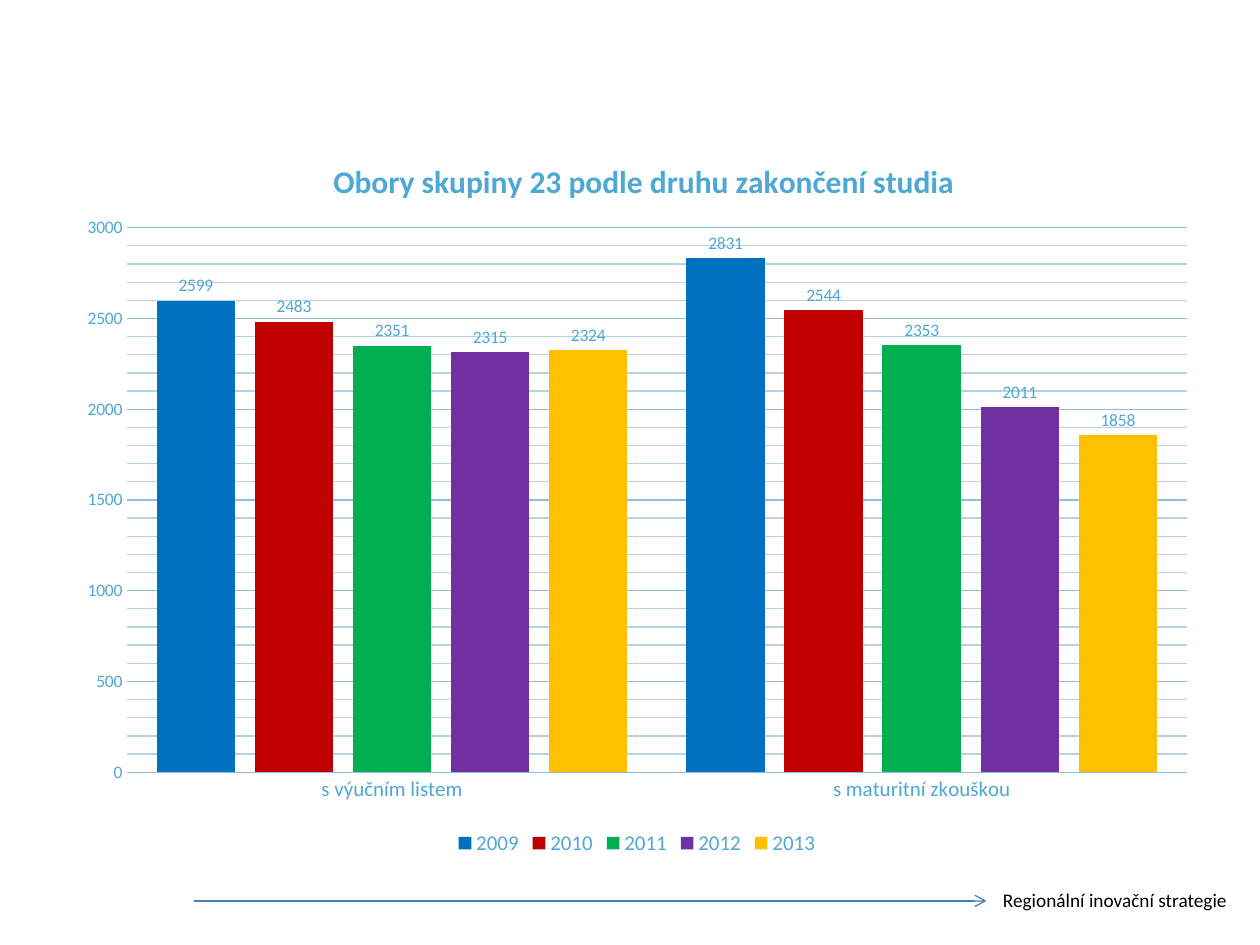
from dataclasses import dataclass

from lxml import etree
from pptx import Presentation
from pptx.chart.data import CategoryChartData
from pptx.dml.color import RGBColor
from pptx.enum import chart as ch, shapes, text
from pptx.oxml import parse_xml
from pptx.oxml.ns import nsdecls, qn
from pptx.util import Inches, Pt

FONT = "Calibri"
SKY = "4EA8D4"


@dataclass
class Year:
    name: str
    vals: tuple[int, int]
    color: str


YEARS = [
    Year("2009", (2599, 2831), "0070C0"),
    Year("2010", (2483, 2544), "C00000"),
    Year("2011", (2351, 2353), "00B050"),
    Year("2012", (2315, 2011), "7030A0"),
    Year("2013", (2324, 1858), "FFC000"),
]


def rgb(code: str) -> RGBColor:
    return RGBColor.from_string(code)


def style(font, size: float, color: str = SKY, bold: bool = False) -> None:
    font.name = FONT
    font.size = Pt(size)
    font.bold = bold
    font.color.rgb = rgb(color)


def stroke(line, color: str, width: float = 0.75) -> None:
    line.color.rgb = rgb(color)
    line.width = Pt(width)


def layout(**spots: float):
    modes = "".join(f'<c:{k}Mode val="edge"/>' for k in "xy")
    sizes = "".join(f'<c:{k} val="{v}"/>' for k, v in spots.items())
    inner = '<c:layoutTarget val="inner"/>' if "w" in spots else ""
    return parse_xml(
        f'<c:layout {nsdecls("c")}><c:manualLayout>{inner}{modes}{sizes}'
        "</c:manualLayout></c:layout>"
    )


def place(node, spot, after: str | None = None) -> None:
    for old in node.findall(qn("c:layout")):
        node.remove(old)
    if after:
        node.find(qn(after)).addnext(spot)
    else:
        node.insert(0, spot)


def draw_axes(chart) -> None:
    cat, val = chart.category_axis, chart.value_axis
    for axis, size in ((cat, 12), (val, 10)):
        axis.major_tick_mark = ch.XL_TICK_MARK.NONE
        axis.minor_tick_mark = ch.XL_TICK_MARK.NONE
        style(axis.tick_labels.font, size)
    stroke(cat.format.line, "8FBFDD")
    val.format.line.fill.background()
    val.minimum_scale, val.maximum_scale = 0, 3000
    val.major_unit, val.minor_unit = 500, 100
    val.has_major_gridlines = val.has_minor_gridlines = True
    stroke(val.major_gridlines.format.line, "8FBFDD")
    grid = parse_xml(
        f'<c:minorGridlines {nsdecls("c", "a")}><c:spPr><a:ln w="9525">'
        '<a:solidFill><a:srgbClr val="B5D3E2"/></a:solidFill></a:ln></c:spPr>'
        "</c:minorGridlines>"
    )
    node = val.major_gridlines._xAx
    node.replace(node.find(qn("c:minorGridlines")), grid)


def draw_chart(slide) -> None:
    data = CategoryChartData()
    data.categories = ["s výučním listem", "s maturitní zkouškou"]
    for year in YEARS:
        data.add_series(year.name, year.vals)
    chart = slide.shapes.add_chart(
        ch.XL_CHART_TYPE.COLUMN_CLUSTERED,
        Inches(0.51), Inches(0.99), Inches(9.09), Inches(5.84), data,
    ).chart
    style(chart.font, 10)

    chart.has_title = True
    para = chart.chart_title.text_frame.paragraphs[0]
    para.text = "Obory skupiny 23 podle druhu zakončení studia"
    style(para.font, 18, bold=True)
    place(chart.chart_title._element, layout(x=0.23, y=0.04), "c:tx")

    chart.has_legend = True
    chart.legend.position = ch.XL_LEGEND_POSITION.BOTTOM
    chart.legend.include_in_layout = False
    style(chart.legend.font, 12)

    plot = chart.plots[0]
    plot.vary_by_categories = False
    plot.gap_width, plot.overlap = 75, -25
    for year, bars in zip(YEARS, plot.series):
        bars.format.fill.solid()
        bars.format.fill.fore_color.rgb = rgb(year.color)
        tags = bars.data_labels
        tags.show_value = True
        tags.position = ch.XL_LABEL_POSITION.OUTSIDE_END
        style(tags.font, 10)
    draw_axes(chart)
    area = chart._chartSpace.chart.plotArea
    place(area, layout(x=0.055, y=0.14, w=0.925, h=0.74))


def draw_arrow(slide) -> None:
    arrow = slide.shapes.add_connector(
        shapes.MSO_CONNECTOR.STRAIGHT,
        Inches(1.54), Inches(7.15), Inches(7.83), Inches(7.15),
    )
    stroke(arrow.line, "4B7EBC")
    etree.SubElement(arrow.line._get_or_add_ln(), qn("a:tailEnd"), type="arrow")
    etree.SubElement(arrow._element.spPr, qn("a:effectLst"))


def draw_footer(slide) -> None:
    box = slide.shapes.add_textbox(
        Inches(7.96), Inches(7.05), Inches(1.81), Inches(0.19)
    )
    frame = box.text_frame
    frame.margin_left = frame.margin_right = 0
    frame.margin_top = frame.margin_bottom = 0
    frame.word_wrap = False
    frame.auto_size = text.MSO_AUTO_SIZE.SHAPE_TO_FIT_TEXT
    para = frame.paragraphs[0]
    para.text = "Regionální inovační strategie"
    style(para.font, 11, "000000")


def main() -> None:
    deck = Presentation()
    deck.slide_width, deck.slide_height = Inches(10), Inches(7.5)
    slide = deck.slides.add_slide(deck.slide_layouts[6])
    draw_arrow(slide)
    draw_footer(slide)
    draw_chart(slide)
    deck.save("out.pptx")


if __name__ == "__main__":
    main()
